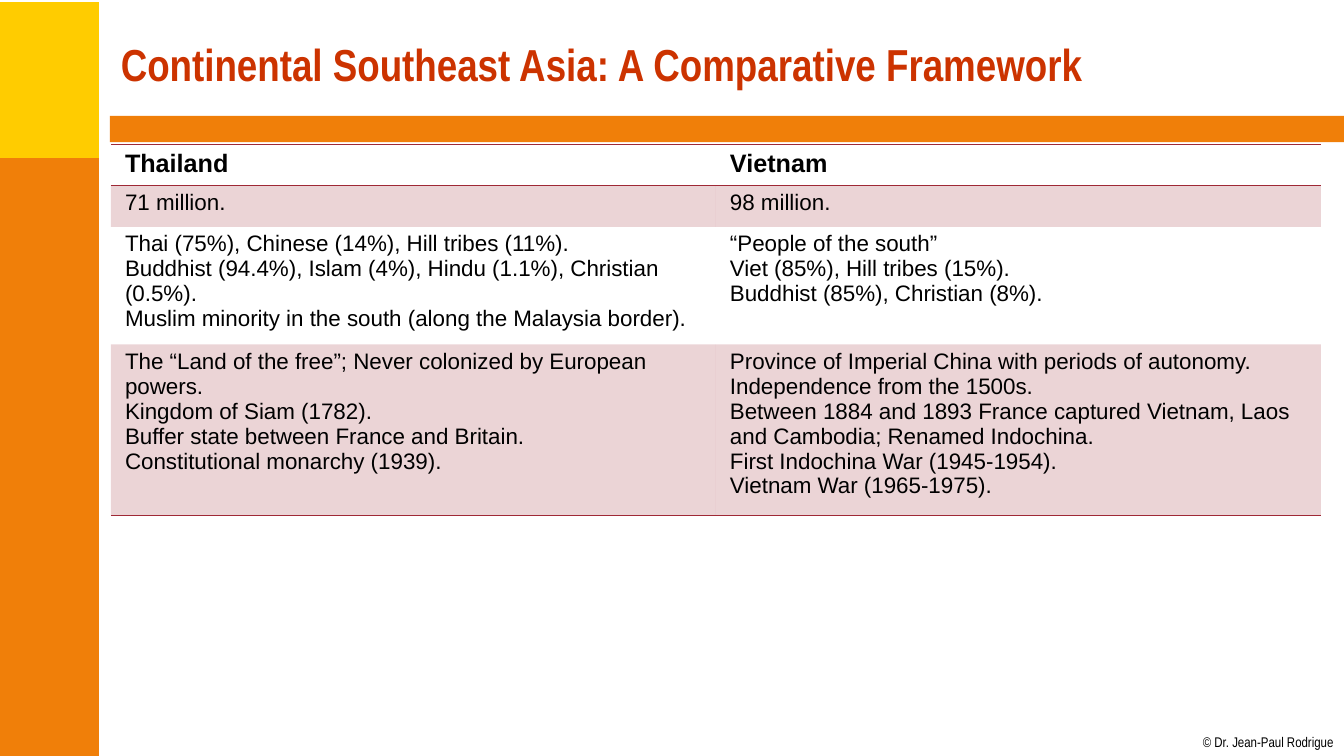
"""Build a slide comparing Thailand and Vietnam in a banded table."""
from lxml import etree
from pptx import Presentation
from pptx import util as u
from pptx.dml.color import RGBColor
from pptx.enum import shapes, text
from pptx.oxml.ns import qn

TITLE = "Continental Southeast Asia: A Comparative Framework"
CREDIT = "© Dr. Jean-Paul Rodrigue"
COMPARISON = [
    (["Thailand"], ["Vietnam"]),
    (["71 million."], ["98 million."]),
    (
        [
            "Thai (75%), Chinese (14%), Hill tribes (11%).",
            "Buddhist (94.4%), Islam (4%), Hindu (1.1%), Christian (0.5%).",
            "Muslim minority in the south (along the Malaysia border).",
        ],
        [
            "“People of the south”",
            "Viet (85%), Hill tribes (15%).",
            "Buddhist (85%), Christian (8%).",
        ],
    ),
    (
        [
            "The “Land of the free”; Never colonized by European powers.",
            "Kingdom of Siam (1782).",
            "Buffer state between France and Britain.",
            "Constitutional monarchy (1939).",
        ],
        [
            "Province of Imperial China with periods of autonomy.",
            "Independence from the 1500s.",
            "Between 1884 and 1893 France captured Vietnam, Laos and Cambodia; Renamed Indochina.",
            "First Indochina War (1945-1954).",
            "Vietnam War (1965-1975).",
        ],
    ),
]
ROW_HEIGHTS = [0.41, 0.41, 1.09, 1.58]
PANELS = [
    ("yellow", (0, 0.02, 0.98, 1.58)),
    ("orange", (0, 1.57, 0.98, 5.93)),
    ("orange", (1.09, 1.15, 12.24, 0.26)),
]
THEME = {
    "yellow": "FFCC00", "orange": "F07F09", "title": "CC3300",
    "ink": "000000", "accent": "9F2936", "band_alpha": 20,
    "heading_font": "Arial Narrow", "body_font": "Arial",
    "title_size": 32, "header_size": 18, "body_size": 16, "credit_size": 10,
    "rule": 1, "no_style": "{2D5ABB26-0587-4C30-8999-92F81FD0307C}",
}


def inches(box):
    return [u.Inches(length) for length in box]


def write(frame, lines, font, size, color, bold=False):
    for index, line in enumerate(lines):
        paragraph = frame.paragraphs[0] if index == 0 else frame.add_paragraph()
        run = paragraph.add_run()
        run.text = line
        run.font.name = font
        run.font.size = u.Pt(size)
        run.font.bold = bold
        run.font.color.rgb = RGBColor.from_string(THEME[color])


def add_panel(slide, color, box):
    panel = slide.shapes.add_shape(shapes.MSO_SHAPE.RECTANGLE, *inches(box))
    panel.shadow.inherit = False
    panel.fill.solid()
    panel.fill.fore_color.rgb = RGBColor.from_string(THEME[color])
    panel.line.fill.background()


def add_color(parent, alpha=None):
    fill = etree.SubElement(parent, qn("a:solidFill"))
    accent = etree.SubElement(fill, qn("a:srgbClr"), val=THEME["accent"])
    if alpha is not None:
        etree.SubElement(accent, qn("a:alpha"), val=str(alpha * 1000))


def style_cell(cell, edges, banded):
    cell.margin_left = cell.margin_right = u.Inches(0.14)
    cell.margin_top = cell.margin_bottom = u.Inches(0.05)
    properties = cell._tc.get_or_add_tcPr()
    for edge in edges:
        rule = etree.SubElement(properties, qn(f"a:{edge}"), w=str(u.Pt(THEME["rule"])))
        add_color(rule)
    if banded:
        add_color(properties, THEME["band_alpha"])
    else:
        cell.fill.background()


def add_comparison(slide):
    rows, columns = len(COMPARISON), len(COMPARISON[0])
    box = (1.1, 1.43, 12, sum(ROW_HEIGHTS))
    table = slide.shapes.add_table(rows, columns, *inches(box)).table
    table._tbl.tblPr.find(qn("a:tableStyleId")).text = THEME["no_style"]
    for index, (countries, height) in enumerate(zip(COMPARISON, ROW_HEIGHTS)):
        table.rows[index].height = u.Inches(height)
        header = index == 0
        edges = ["lnT", "lnB"] if header else ["lnB"] if index == rows - 1 else []
        size = THEME["header_size" if header else "body_size"]
        for column, facts in enumerate(countries):
            cell = table.cell(index, column)
            style_cell(cell, edges, banded=index % 2 == 1)
            write(cell.text_frame, facts, THEME["body_font"], size, "ink", header)


def main():
    deck = Presentation()
    deck.slide_width, deck.slide_height = inches((13.33, 7.5))
    slide = deck.slides.add_slide(deck.slide_layouts[6])
    for color, box in PANELS:
        add_panel(slide, color, box)

    credit = slide.shapes.add_textbox(*inches((11.93, 7.28, 1.31, 0.17))).text_frame
    credit.margin_left = credit.margin_right = credit.margin_top = credit.margin_bottom = 0
    credit.word_wrap = False
    write(credit, [CREDIT], THEME["heading_font"], THEME["credit_size"], "ink")

    title = slide.shapes.add_textbox(*inches((1.1, 0.11, 12, 1.04))).text_frame
    title.word_wrap = True
    title.vertical_anchor = text.MSO_ANCHOR.MIDDLE
    write(title, [TITLE], THEME["heading_font"], THEME["title_size"], "title", True)

    add_comparison(slide)
    deck.save("out.pptx")


if __name__ == "__main__":
    main()
